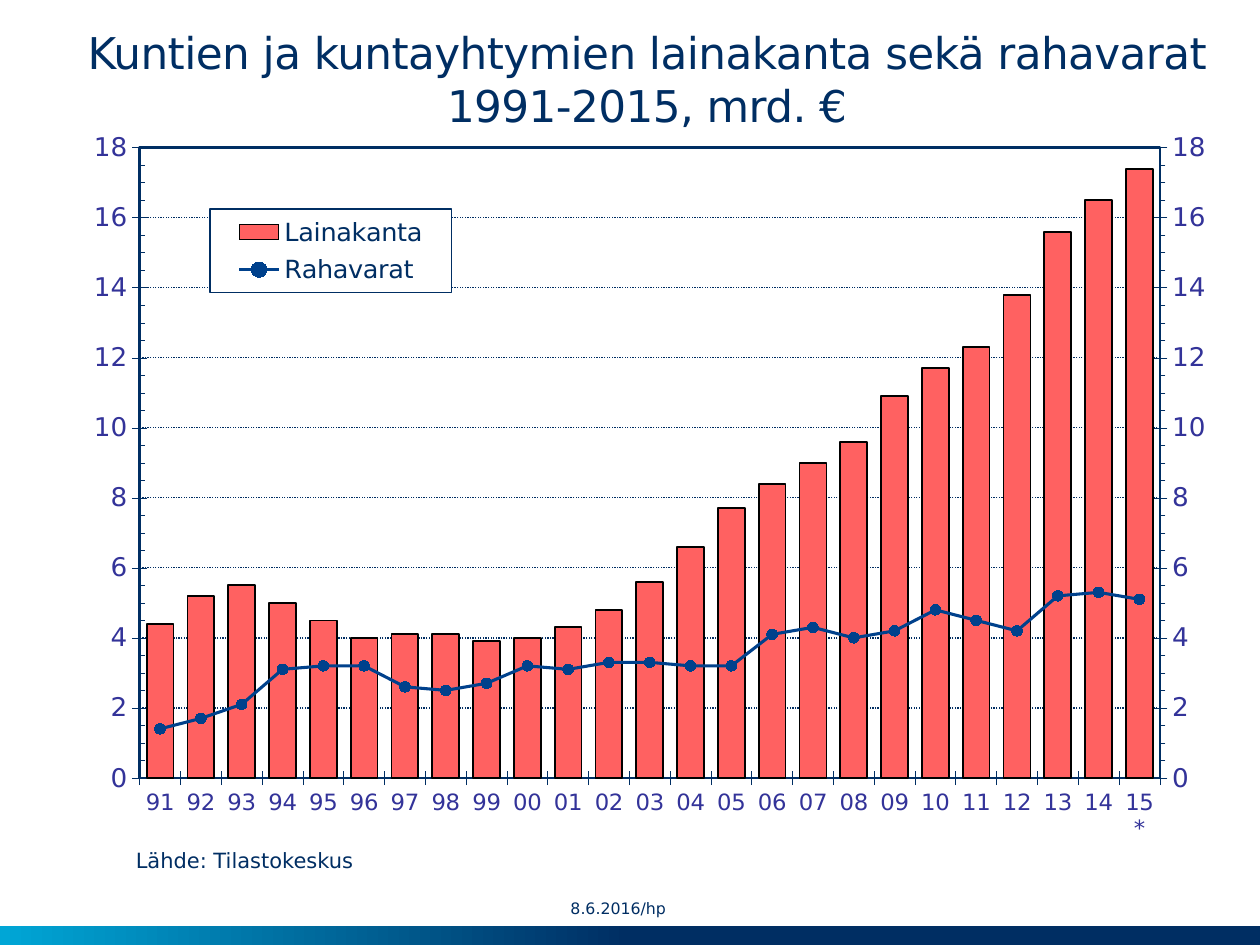
"""Build the slide on municipal loans and cash funds, 1991-2015."""
import copy
from dataclasses import dataclass

import pptx
import pptx.chart.data
import pptx.dml.color
import pptx.enum.chart
import pptx.enum.dml
import pptx.enum.shapes
import pptx.enum.text
import pptx.oxml
import pptx.oxml.ns
import pptx.util

Pt = pptx.util.Pt
qn = pptx.oxml.ns.qn
Tick = pptx.enum.chart.XL_TICK_MARK
Align = pptx.enum.text.PP_ALIGN
Anchor = pptx.enum.text.MSO_ANCHOR

FACE = "DejaVu Sans"
NAVY, CYAN, BLUE, RED = "002E63", "00A6D6", "00418C", "FF6161"
VIOLET, BLACK, WHITE = "333399", "000000", "FFFFFF"
SPACE = pptx.oxml.ns.nsdecls("a", "c")


@dataclass(frozen=True)
class Box:
    left: float
    top: float
    width: float
    height: float

    def place(self) -> list:
        return [Pt(n) for n in (self.left, self.top, self.width, self.height)]


@dataclass(frozen=True)
class Series:
    name: str
    vals: tuple


LOANS = Series("Lainakanta", (
    4.4, 5.2, 5.5, 5, 4.5, 4, 4.1, 4.1, 3.9, 4, 4.3, 4.8, 5.6, 6.6, 7.7, 8.4,
    9, 9.6, 10.9, 11.7, 12.3, 13.8, 15.6, 16.5, 17.4))
FUNDS = Series("Rahavarat", (
    1.4, 1.7, 2.1, 3.1, 3.2, 3.2, 2.6, 2.5, 2.7, 3.2, 3.1, 3.3, 3.3, 3.2, 3.2,
    4.1, 4.3, 4, 4.2, 4.8, 4.5, 4.2, 5.2, 5.3, 5.1))
YEARS = [f"{year % 100:02d}" for year in range(1991, 2015)] + ["15*"]


def tint(code: str) -> pptx.dml.color.RGBColor:
    return pptx.dml.color.RGBColor.from_string(code)


def style(font, size: float, color: str, face: str = FACE, bold: bool = False) -> None:
    font.name, font.size, font.bold = face, Pt(size), bold
    font.color.rgb = tint(color)


def paint(form, color: str) -> None:
    form.fill.solid()
    form.fill.fore_color.rgb = tint(color)


def rule(line, color: str, width: float) -> None:
    line.color.rgb = tint(color)
    line.width = Pt(width)


def write(slide, text: str, box: Box, size: float, align=Align.LEFT,
          anchor=Anchor.TOP, inset: tuple = (7.2, 3.6), kern: float = 0) -> None:
    frame = slide.shapes.add_textbox(*box.place()).text_frame
    frame.word_wrap = True
    frame.vertical_anchor = anchor
    frame.margin_left = frame.margin_right = Pt(inset[0])
    frame.margin_top = frame.margin_bottom = Pt(inset[1])
    para = frame.paragraphs[0]
    para.text = text
    para.alignment = align
    for run in para.runs:
        style(run.font, size, NAVY)
        if kern:
            run.font._element.set("spc", str(round(kern * 100)))


def build(body: str):
    tag, rest = body.split(">", 1)
    return pptx.oxml.parse_xml(f"{tag} {SPACE}>{rest}")


def layout(left: float, top: float, width: float, height: float, inner: bool = False):
    parts = '<c:layoutTarget val="inner"/>' if inner else ""
    parts += '<c:xMode val="edge"/><c:yMode val="edge"/>'
    for key, val in zip("xywh", (left, top, width, height)):
        parts += f'<c:{key} val="{val}"/>'
    return build(f"<c:layout><c:manualLayout>{parts}</c:manualLayout></c:layout>")


def border(width: float, fill: str):
    return build(f'<c:spPr>{fill}<a:ln w="{int(Pt(width))}"><a:solidFill>'
                 f'<a:srgbClr val="{NAVY}"/></a:solidFill></a:ln></c:spPr>')


def drop(root, *names: str) -> None:
    for name in names:
        for node in root.findall(qn(name)):
            root.remove(node)


def adjust(root, **vals: str) -> None:
    for name, val in vals.items():
        root.find(qn(f"c:{name}")).set("val", val)


def dress(axis, size: float) -> None:
    axis.major_tick_mark = Tick.CROSS
    style(axis.tick_labels.font, size, VIOLET)
    rule(axis.format.line, NAVY, 0.31)


def split(chart) -> None:
    """Move the last series to a line plot on a second pair of axes."""
    area = chart.element.find(qn("c:chart")).find(qn("c:plotArea"))
    bar = area.find(qn("c:barChart"))
    ser = bar.findall(qn("c:ser"))[-1]
    drop(ser, "c:invertIfNegative")
    line = build('<c:lineChart><c:grouping val="standard"/><c:varyColors val="0"/>'
                 '<c:marker val="1"/><c:axId val="501"/><c:axId val="502"/></c:lineChart>')
    line.insert(2, ser)
    bar.addnext(line)
    cat, val = area.find(qn("c:catAx")), area.find(qn("c:valAx"))
    right, base = copy.deepcopy(val), copy.deepcopy(cat)
    drop(right, "c:majorGridlines")
    adjust(right, axId="502", crossAx="501", axPos="r", crosses="max", minorTickMark="out")
    adjust(base, axId="501", crossAx="502", delete="1")
    val.addnext(right)
    right.addnext(base)
    drop(area, "c:layout")
    area.insert(0, layout(0.06, 0.02, 0.89, 0.9, inner=True))
    adjust_plot = area.find(qn("c:layout")).find(qn("c:manualLayout"))
    adjust(adjust_plot, x="0.059", y="0.022", w="0.886", h="0.904")
    area.append(border(1.5, "<a:noFill/>"))


def label(chart) -> None:
    chart.has_legend = True
    key = chart.legend
    key.position = pptx.enum.chart.XL_LEGEND_POSITION.RIGHT
    key.include_in_layout = False
    style(key.font, 14.6, NAVY)
    root = key._element
    drop(root, "c:layout")
    root.find(qn("c:legendPos")).addnext(layout(0.12, 0.11, 0.21, 0.12))
    white = f'<a:solidFill><a:srgbClr val="{WHITE}"/></a:solidFill>'
    root.find(qn("c:overlay")).addnext(border(0.75, white))


def plot(slide, box: Box) -> None:
    data = pptx.chart.data.CategoryChartData()
    data.categories = YEARS
    for item in (LOANS, FUNDS):
        data.add_series(item.name, item.vals)
    kind = pptx.enum.chart.XL_CHART_TYPE.COLUMN_CLUSTERED
    chart = slide.shapes.add_chart(kind, *box.place(), data).chart
    chart.has_title = False
    style(chart.font, 22.3, NAVY, face="Times New Roman", bold=True)
    dress(chart.category_axis, 13)
    axis = chart.value_axis
    dress(axis, 15)
    axis.minimum_scale, axis.maximum_scale = 0, 18
    axis.major_unit, axis.minor_unit = 2, 0.5
    axis.minor_tick_mark = Tick.INSIDE
    axis.tick_labels.number_format = "0"
    axis.tick_labels.number_format_is_linked = False
    grid = axis.major_gridlines.format.line
    rule(grid, NAVY, 0.75)
    grid.dash_style = pptx.enum.dml.MSO_LINE.ROUND_DOT
    split(chart)
    bars, lines = chart.plots
    bars.vary_by_categories = lines.vary_by_categories = False
    bars.gap_width = 52
    loans, funds = bars.series[0], lines.series[0]
    paint(loans.format, RED)
    rule(loans.format.line, BLACK, 1)
    rule(funds.format.line, BLUE, 1.75)
    funds.smooth = False
    mark = funds.marker
    mark.style, mark.size = pptx.enum.chart.XL_MARKER_STYLE.CIRCLE, 6
    paint(mark.format, BLUE)
    rule(mark.format.line, BLUE, 0.75)
    label(chart)


def band(slide, box: Box) -> None:
    kind = pptx.enum.shapes.MSO_SHAPE.RECTANGLE
    strip = slide.shapes.add_shape(kind, *box.place())
    strip.shadow.inherit = False
    strip.line.fill.background()
    strip.fill.gradient()
    strip.fill.gradient_angle = 180
    for stop, place, color in zip(strip.fill.gradient_stops, (0.5, 1), (NAVY, CYAN)):
        stop.position, stop.color.rgb = place, tint(color)


def main() -> None:
    deck = pptx.Presentation()
    deck.slide_width, deck.slide_height = Pt(720), Pt(540)
    slide = deck.slides.add_slide(deck.slide_layouts[6])
    band(slide, Box(0, 529, 720, 11))
    write(slide, "Kuntien ja kuntayhtymien lainakanta sekä rahavarat\v1991-2015, mrd. €",
          Box(31, 15, 677.5, 63.5), 25, align=Align.CENTER, anchor=Anchor.BOTTOM,
          inset=(0, 3.6), kern=-0.3)
    plot(slide, Box(41, 75.6, 658, 405.4))
    write(slide, "Lähde: Tilastokeskus", Box(70.5, 481, 206.5, 21.6), 12)
    write(slide, "8.6.2016/hp", Box(326, 508.3, 188, 21), 9, anchor=Anchor.MIDDLE, inset=(0, 0))
    deck.save("out.pptx")


if __name__ == "__main__":
    main()
